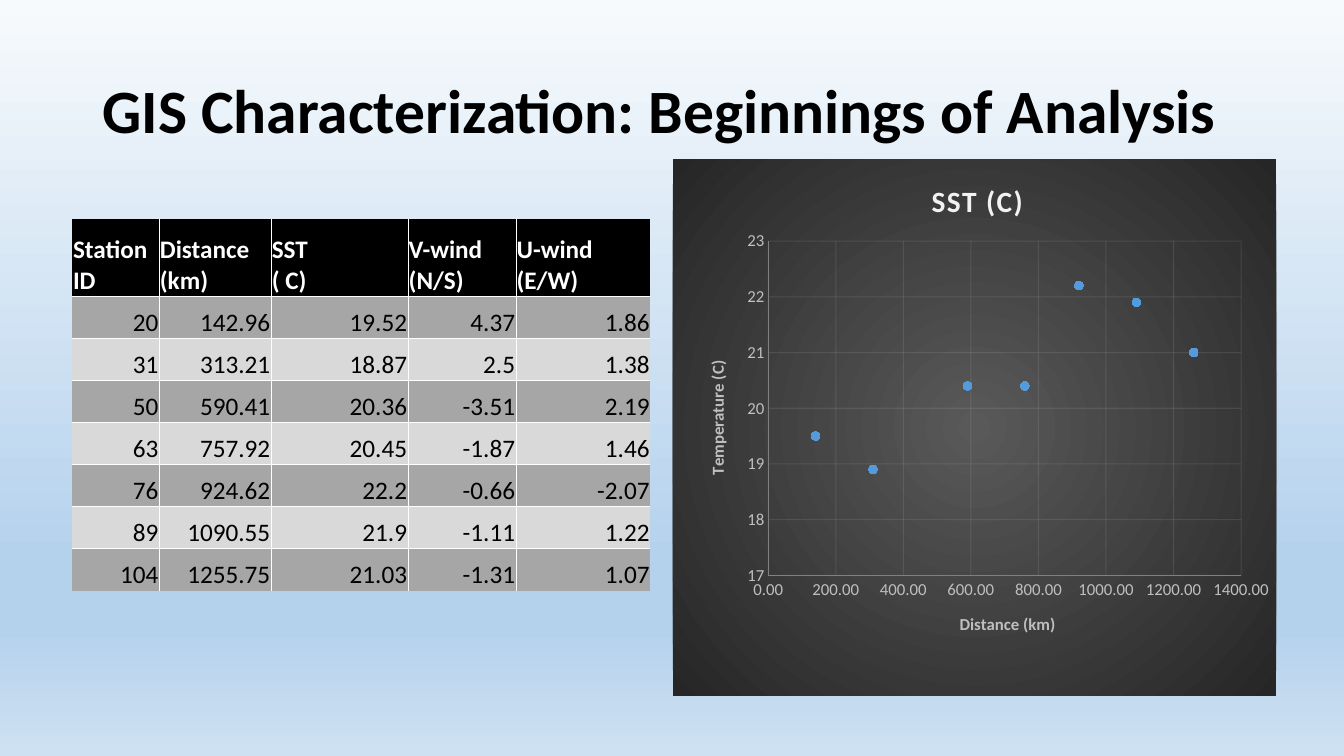
from lxml import etree
from pptx import Presentation
from pptx.chart.data import XyChartData
from pptx.dml.color import RGBColor
from pptx.enum.chart import XL_CHART_TYPE, XL_MARKER_STYLE, XL_TICK_MARK
from pptx.enum.text import MSO_ANCHOR, PP_ALIGN
from pptx.oxml import parse_xml
from pptx.oxml.ns import nsdecls, qn
from pptx.util import Cm, Pt

SCATTER = XL_CHART_TYPE.XY_SCATTER
DOT = XL_MARKER_STYLE.CIRCLE
NO_TICK = XL_TICK_MARK.NONE
MIDDLE, BOTTOM = MSO_ANCHOR.MIDDLE, MSO_ANCHOR.BOTTOM
LEFT, RIGHT = PP_ALIGN.LEFT, PP_ALIGN.RIGHT

BLACK = RGBColor(0x00, 0x00, 0x00)
WHITE = RGBColor(0xFF, 0xFF, 0xFF)
GRAY = RGBColor(0xA6, 0xA6, 0xA6)
PALE = RGBColor(0xD9, 0xD9, 0xD9)
LABEL = RGBColor(0xBF, 0xBF, 0xBF)
AXIS = RGBColor(0x80, 0x80, 0x80)
LIGHT = RGBColor(0xF2, 0xF2, 0xF2)
BLUE = RGBColor(0x55, 0x9B, 0xDB)
SKY = [(0, RGBColor(0xF7, 0xFA, 0xFD)), (74, RGBColor(0xB5, 0xD2, 0xEC)),
       (83, RGBColor(0xB5, 0xD2, 0xEC)), (100, RGBColor(0xCE, 0xE1, 0xF2))]
DARK = [(0, RGBColor(0x59, 0x59, 0x59)), (100, RGBColor(0x26, 0x26, 0x26))]
DOWN = '<a:lin ang="5400000" scaled="0"/>'
ROUND = ('<a:path path="circle"><a:fillToRect l="50000" t="50000" '
         'r="50000" b="50000"/></a:path>')

HEADS = ["Station ID", "Distance (km)", "SST\n( C)", "V-wind (N/S)", "U-wind (E/W)"]
ROWS = [
    (20, 142.96, 19.52, 4.37, 1.86),
    (31, 313.21, 18.87, 2.5, 1.38),
    (50, 590.41, 20.36, -3.51, 2.19),
    (63, 757.92, 20.45, -1.87, 1.46),
    (76, 924.62, 22.2, -0.66, -2.07),
    (89, 1090.55, 21.9, -1.11, 1.22),
    (104, 1255.75, 21.03, -1.31, 1.07),
]
WIDTHS = [2.19, 2.82, 3.45, 2.72, 3.39]


def blend(stops, way):
    """Return a gradient fill element with the given stops and direction."""
    marks = "".join(f'<a:gs pos="{pos * 1000}"><a:srgbClr val="{tone}"/></a:gs>'
                    for pos, tone in stops)
    return parse_xml(f'<a:gradFill {nsdecls("a")} rotWithShape="1">'
                     f'<a:gsLst>{marks}</a:gsLst>{way}</a:gradFill>')


def pin(host, at, **spots):
    """Give a chart part a manual layout, in fractions of the chart."""
    old = host.find(qn("c:layout"))
    if old is not None:
        at = host.index(old)
        host.remove(old)
    modes = "".join(f'<c:{k}Mode val="edge"/>' for k in "xy")
    inner = '<c:layoutTarget val="inner"/>' if "w" in spots else ""
    vals = "".join(f'<c:{k} val="{v}"/>' for k, v in spots.items())
    host.insert(at, parse_xml(f'<c:layout {nsdecls("c")}><c:manualLayout>'
                              f'{inner}{modes}{vals}</c:manualLayout></c:layout>'))


class Deck:
    def __init__(self, face):
        self.face = face
        self.prs = Presentation()
        self.prs.slide_width, self.prs.slide_height = Cm(33.87), Cm(19.05)
        self.slide = self.prs.slides.add_slide(self.prs.slide_layouts[5])

    def style(self, font, size, color, bold=False):
        font.name, font.size, font.bold = self.face, Pt(size), bold
        font.color.rgb = color

    def back(self, stops):
        self.slide.background.fill.solid()
        props = self.slide.element.find(".//" + qn("p:bgPr"))
        props.replace(props[0], blend(stops, DOWN))

    def title(self, text, x, y, w, h):
        head = self.slide.shapes.title
        head.left, head.top, head.width, head.height = Cm(x), Cm(y), Cm(w), Cm(h)
        frame = head.text_frame
        frame.text, frame.vertical_anchor = text, MIDDLE
        para = frame.paragraphs[0]
        para.alignment, para.line_spacing = LEFT, 0.9
        self.style(para.font, 44, BLACK, True)

    def cell(self, cell, text, inside, fill, color, align, bold):
        """Fill one cell; `inside` tells for L, R, T, B if the side is ruled."""
        cell.text = text
        cell.vertical_anchor = BOTTOM
        cell.margin_left = cell.margin_right = cell.margin_top = Cm(0.02)
        cell.margin_bottom = 0
        cell.fill.solid()
        cell.fill.fore_color.rgb = fill
        for para in cell.text_frame.paragraphs:
            para.alignment = align
            self.style(para.font, 18, color, bold)
        props = cell._tc.get_or_add_tcPr()
        rule = f'<a:solidFill><a:srgbClr val="{WHITE}"/></a:solidFill>'
        for i, (side, ruled) in enumerate(zip("LRTB", inside)):
            props.insert(i, parse_xml(
                f'<a:ln{side} {nsdecls("a")} w="{Pt(0.5)}">'
                f'{rule if ruled else "<a:noFill/>"}</a:ln{side}>'))

    def table(self, heads, rows, widths, x, y, top, step):
        """Place a table with a header row `top` high and rows `step` high."""
        high = top + step * len(rows)
        grid = self.slide.shapes.add_table(len(rows) + 1, len(heads), Cm(x), Cm(y),
                                           Cm(sum(widths)), Cm(high)).table
        for col, width in zip(grid.columns, widths):
            col.width = Cm(width)
        for r, row in enumerate([heads, *rows]):
            grid.rows[r].height = Cm(step if r else top)
            look = ((GRAY if r % 2 else PALE, BLACK, RIGHT, False) if r
                    else (BLACK, WHITE, LEFT, True))
            for c, value in enumerate(row):
                inside = c > 0, c < len(heads) - 1, r > 0, r < len(rows)
                self.cell(grid.cell(r, c), str(value), inside, *look)

    def label(self, title, text, size, color, x, y):
        title.text_frame.text = text
        font = title.text_frame.paragraphs[0].font
        self.style(font, size, color, True)
        pin(title._element, 1, x=x, y=y)

    def axis(self, axis, text, low, high, step, form, x, y):
        axis.minimum_scale, axis.maximum_scale, axis.major_unit = low, high, step
        axis.major_tick_mark = axis.minor_tick_mark = NO_TICK
        axis.tick_labels.number_format = form
        axis.tick_labels.number_format_is_linked = False
        self.style(axis.tick_labels.font, 12, LABEL)
        axis.has_major_gridlines = True
        mesh = axis.major_gridlines.format.line
        for line, color in (axis.format.line, AXIS), (mesh, LIGHT):
            line.width = Pt(0.75)
            line.color.rgb = color
        tone = axis.major_gridlines._xAx.find(
            f'{qn("c:majorGridlines")}//{qn("a:srgbClr")}')
        etree.SubElement(tone, qn("a:alpha")).set("val", "10000")
        self.label(axis.axis_title, text, 12, LABEL, x, y)

    def scatter(self, name, points, x, y, w, h):
        data = XyChartData()
        dots = data.add_series(name)
        for far, warm in points:
            dots.add_data_point(round(far, -1), round(warm, 1))
        chart = self.slide.shapes.add_chart(SCATTER, Cm(x), Cm(y), Cm(w), Cm(h),
                                            data).chart
        self.style(chart.font, 10, BLACK)
        chart.has_legend = False
        chart.has_title = True
        self.label(chart.chart_title, name, 21, LIGHT, 0.42, 0.03)
        chart.chart_title.text_frame.paragraphs[0].font._element.set("spc", "100")
        self.axis(chart.category_axis, "Distance (km)", 0, 1400, 200, "0.00", 0.47, 0.84)
        self.axis(chart.value_axis, "Temperature (C)", 17, 23, 1, "General", 0.05, 0.37)

        plot = chart.plots[0]
        plot.vary_by_categories = False
        series = plot.series[0]
        series.smooth = False
        series.format.line.fill.background()
        mark = series.marker
        mark.style, mark.size = DOT, 6
        mark.format.fill.solid()
        mark.format.fill.fore_color.rgb = BLUE
        mark.format.line.fill.background()

        root = chart.element
        pin(root.find(".//" + qn("c:plotArea")), 0, x=0.158, y=0.153, w=0.784, h=0.623)
        panel = parse_xml(f'<c:spPr {nsdecls("c", "a")}><a:ln><a:noFill/></a:ln></c:spPr>')
        panel.insert(0, blend(DARK, ROUND))
        root.find(qn("c:chart")).addnext(panel)


def main():
    deck = Deck("Calibri")
    deck.back(SKY)
    deck.title("GIS Characterization: Beginnings of Analysis", 2.33, 1.01, 29.21, 3.68)
    deck.table(HEADS, ROWS, WIDTHS, 1.82, 5.51, 1.95, 1.06)
    deck.scatter("SST (C)", [row[1:3] for row in ROWS], 16.96, 4.01, 15.2, 13.52)
    deck.prs.save("out.pptx")


if __name__ == "__main__":
    main()
